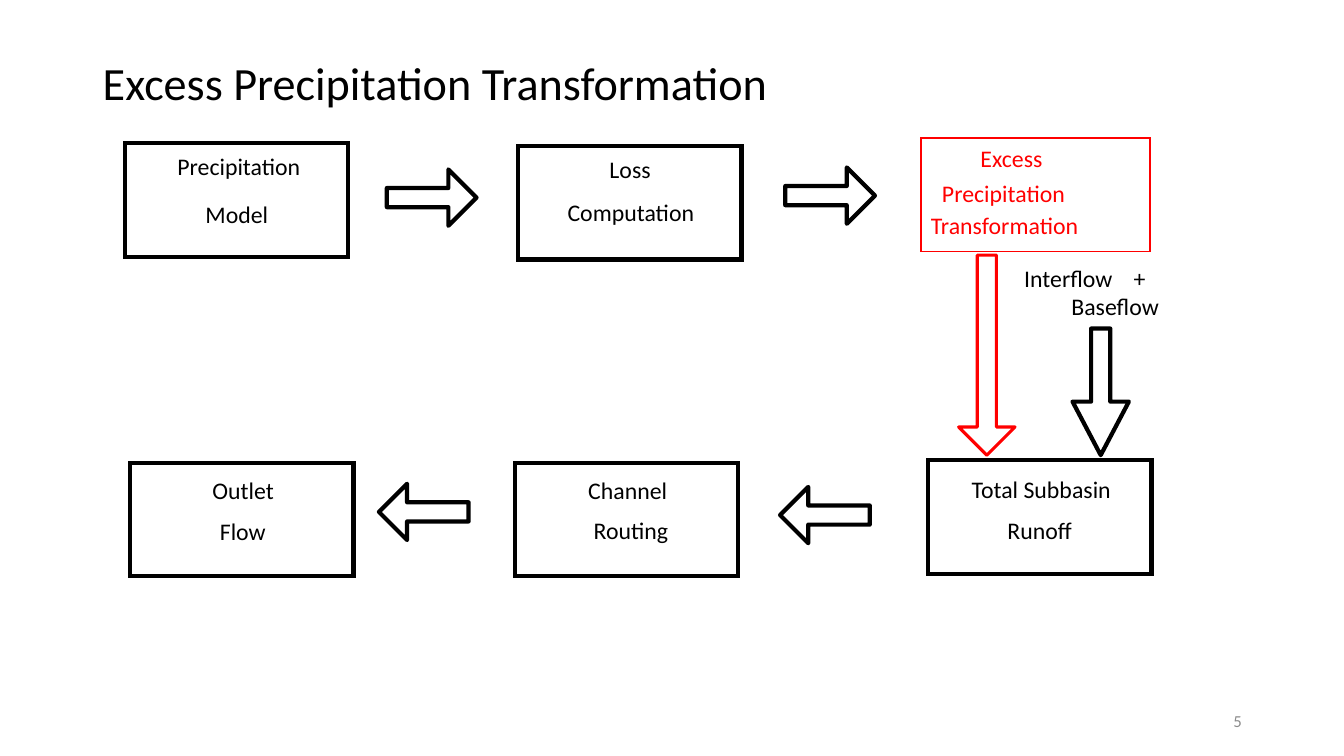
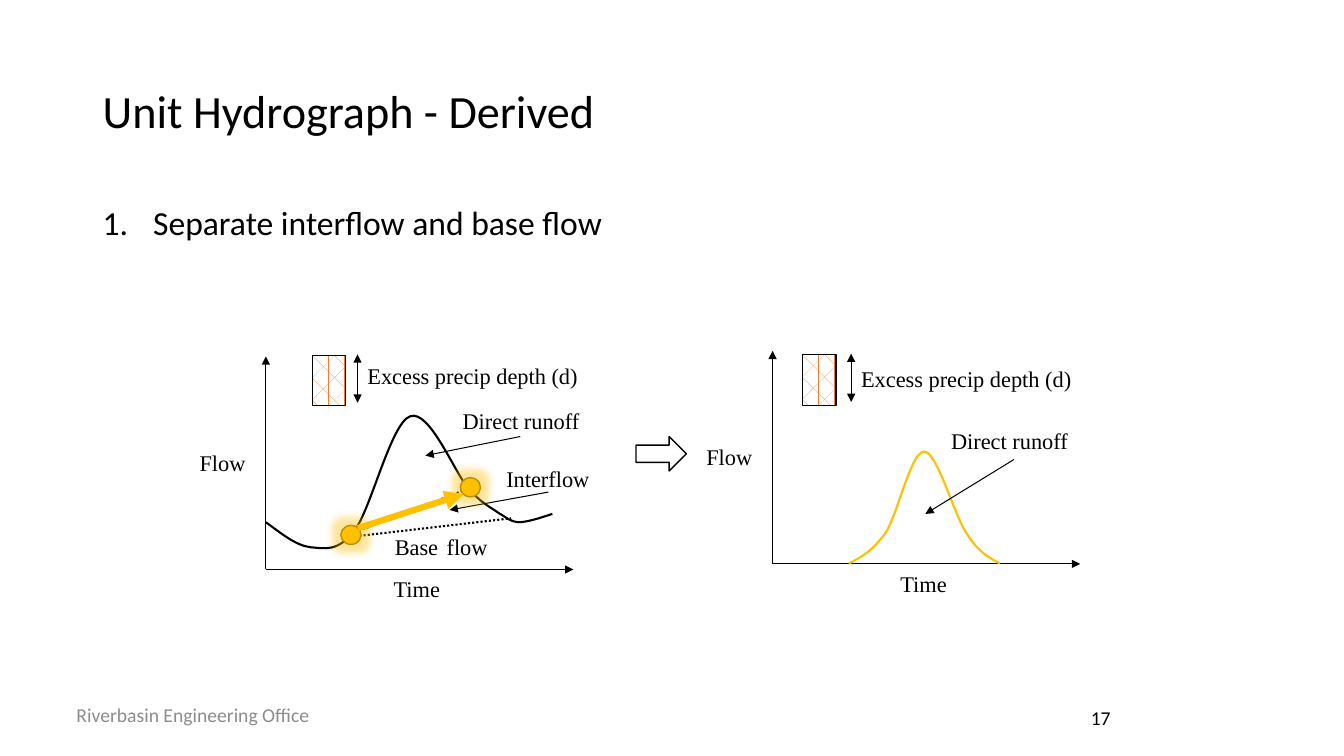
from lxml import etree
from pptx import Presentation
from pptx import util as u
from pptx.dml.color import RGBColor
from pptx.enum import dml, shapes, text
from pptx.oxml.ns import qn

BLACK, WHITE, RED = "000000", "FFFFFF", "FF0000"
GREY, AMBER, DARK_AMBER, ORANGE = "8C8C8C", "FFC000", "BD8E00", "ED7D31"
SANS, SERIF = "Calibri", "Times New Roman"
LEFT, CENTER, RIGHT = text.PP_ALIGN.LEFT, text.PP_ALIGN.CENTER, text.PP_ALIGN.RIGHT
TOP, MIDDLE = text.MSO_ANCHOR.TOP, text.MSO_ANCHOR.MIDDLE
KIND = shapes.MSO_SHAPE
BOX_WIDTH, BOX_HEIGHT = 5.63, 2.86
WORD_WIDTH, WORD_HEIGHT = 5.44, 0.91
ARROW_LENGTH, ARROW_SPAN = 2.26, 1.42
AXIS_WIDTH, AXIS_HEIGHT = 7.75, 5.37


def rgb(color):
    return RGBColor.from_string(color)


def cm(*values):
    return [u.Cm(value) for value in values]


def style_run(run, size, color=BLACK, font=SANS):
    run.font.size = u.Pt(size)
    run.font.name = font
    run.font.color.rgb = rgb(color)


def add_text(slide, place, words, size, color=BLACK, font=SANS, align=LEFT, anchor=TOP):
    frame = slide.shapes.add_textbox(*cm(*place)).text_frame
    frame.word_wrap = True
    frame.vertical_anchor = anchor
    frame.text = words
    paragraph = frame.paragraphs[0]
    paragraph.alignment = align
    style_run(paragraph.runs[0], size, color, font)
    return frame


def add_title(slide, words, height):
    frame = add_text(slide, (2.34, 1.02, 29.21, height), words, 33, anchor=MIDDLE)
    frame.paragraphs[0].line_spacing = 0.9


def add_page_number(slide, number, size, **look):
    add_text(slide, (23.93, 17.66, 7.62, 1.02), number, size, **look)


def add_label(slide, place, words, align=LEFT):
    return add_text(slide, place, words, 16, font=SERIF, align=align)


def add_word(slide, left, top, word, width=WORD_WIDTH, color=BLACK, align=LEFT):
    frame = add_text(slide, (left, top, width, WORD_HEIGHT), word, 17, color=color, align=align)
    frame.margin_left = frame.margin_right = frame.margin_top = frame.margin_bottom = 0


def add_outline(slide, kind, place, color=BLACK, width=3, fill=None):
    shape = slide.shapes.add_shape(kind, *cm(*place))
    shape.shadow.inherit = False
    if fill:
        shape.fill.solid()
        shape.fill.fore_color.rgb = rgb(fill)
    else:
        shape.fill.background()
    shape.line.color.rgb = rgb(color)
    shape.line.width = u.Pt(width)
    return shape


def add_step(slide, left, top, color=BLACK, width=3, box_width=BOX_WIDTH):
    box = add_outline(slide, KIND.RECTANGLE, (left, top, box_width, BOX_HEIGHT), color, width)
    etree.SubElement(box.line._get_or_add_ln(), qn("a:miter"), lim="800000")


def add_block_arrow(slide, kind, place, head=0.5, color=BLACK, width=3):
    arrow = add_outline(slide, kind, place, color, width)
    arrow.adjustments[0] = 0.34
    arrow.adjustments[1] = head


def add_line(slide, ends, color=BLACK, width=0.75, heads=("tailEnd",), dash=None):
    line = slide.shapes.add_connector(shapes.MSO_CONNECTOR.STRAIGHT, *cm(*ends))
    line.line.color.rgb = rgb(color)
    line.line.width = u.Pt(width)
    if dash:
        line.line.dash_style = dash
    outline = line.line._get_or_add_ln()
    for head in heads:
        etree.SubElement(outline, qn(f"a:{head}")).set("type", "triangle")
    etree.SubElement(line._element.spPr, qn("a:effectLst"))


def add_curve(slide, start, curves, color):
    builder = slide.shapes.build_freeform(*cm(*start))
    builder.add_line_segments([cm(*curve[-2:]) for curve in curves], close=False)
    flow = builder.convert_to_shape()
    for segment, curve in zip(list(flow._element.iter(qn("a:lnTo"))), curves):
        bend = etree.Element(qn("a:cubicBezTo"))
        for x, y in zip(cm(*curve[::2]), cm(*curve[1::2])):
            etree.SubElement(bend, qn("a:pt"), x=str(x - flow.left), y=str(y - flow.top))
        segment.getparent().replace(segment, bend)
    flow.shadow.inherit = False
    flow.fill.background()
    flow.line.color.rgb = rgb(color)
    flow.line.width = u.Pt(1.5)


def add_axes(slide, left, base):
    add_line(slide, (left, base, left, base - AXIS_HEIGHT))
    add_line(slide, (left, base, left + AXIS_WIDTH, base))
    add_label(slide, (left + 1.8, base + 0.03, 4.01, 0.94), "Time", CENTER)
    add_label(slide, (left - 1.92, base - 3.16, 1.73, 0.94), "Flow")


def add_rain(slide, bar_left, depth_left, top, label_top):
    bar = add_outline(slide, KIND.RECTANGLE, (bar_left, top, 0.85, 1.27), width=0.75)
    bar.fill.patterned()
    bar.fill.pattern = dml.MSO_PATTERN.DIVOT
    bar.fill.fore_color.rgb = rgb(ORANGE)
    bar.fill.back_color.rgb = rgb(WHITE)
    depth = (depth_left, top - 0.03, depth_left, top + 1.19)
    add_line(slide, depth, heads=("headEnd", "tailEnd"))
    add_label(slide, (depth_left, label_top, 6.25, 0.94), "Excess precip depth (d)")


def add_callout(slide, left, top, words, pointer):
    add_label(slide, (left, top, 4.01, 0.94), words)
    add_line(slide, pointer)


def add_glowing_dot(slide, left, top):
    dot = add_outline(slide, KIND.OVAL, (left, top, 0.51, 0.48), DARK_AMBER, 1, AMBER)
    effects = dot._element.spPr.find(qn("a:effectLst"))
    glow = etree.SubElement(effects, qn("a:glow"), rad=str(u.Pt(11)))
    tint = etree.SubElement(glow, qn("a:srgbClr"), val=AMBER)
    etree.SubElement(tint, qn("a:alpha"), val="40000")


def build_transformation(slide):
    add_title(slide, "Excess Precipitation Transformation", 2.28)
    for left, top in ((3.15, 3.61), (13.06, 3.68), (23.39, 11.6), (12.98, 11.66), (3.28, 11.66)):
        add_step(slide, left, top)
    add_step(slide, 23.21, 3.48, RED, 1, 5.77)
    for middle, top, word in (
        (6.02, 3.83, "Precipitation"), (5.97, 5.04, "Model"),
        (15.88, 3.9, "Loss"), (15.9, 4.97, "Computation"),
        (26.24, 11.96, "Total Subbasin"), (26.2, 13, "Runoff"),
        (15.82, 11.99, "Channel"), (15.9, 13, "Routing"),
        (6.13, 11.99, "Outlet"), (6.12, 13.02, "Flow"),
    ):
        add_word(slide, middle - WORD_WIDTH / 2, top, word, align=CENTER)
    for left, top, word in (
        (24.71, 3.61, "Excess"), (23.74, 4.5, "Precipitation"), (23.46, 5.31, "Transformation"),
    ):
        add_word(slide, left, top, word, color=RED)
    for left, top, word, width in (
        (25.81, 6.64, "Interflow", 2.5), (28.57, 6.64, "+", 0.6), (27, 7.36, "Baseflow", 2.5),
    ):
        add_word(slide, left, top, word, width)

    for kind, left, top in (
        (KIND.RIGHT_ARROW, 9.75, 4.27),
        (KIND.RIGHT_ARROW, 19.79, 4.22),
        (KIND.LEFT_ARROW, 9.55, 12.19),
        (KIND.LEFT_ARROW, 19.66, 12.27),
    ):
        add_block_arrow(slide, kind, (left, top, ARROW_LENGTH, ARROW_SPAN))
    add_block_arrow(slide, KIND.DOWN_ARROW, (24.16, 6.43, ARROW_SPAN, 5.04), 0.5, RED, 2.25)
    add_block_arrow(slide, KIND.DOWN_ARROW, (27.03, 8.28, ARROW_SPAN, 3.19), 0.95)
    add_page_number(slide, "5", 12, color=GREY, align=RIGHT, anchor=MIDDLE)


def build_total_hydrograph(slide):
    add_axes(slide, 6.7, 14.35)
    add_rain(slide, 7.87, 9.01, 8.96, 8.99)
    for ends in ((8.74, 13.49, 11.91, 12.27), (8.74, 13.54, 12.88, 13.06)):
        add_line(slide, ends, width=1.5, heads=(), dash=dml.MSO_LINE.ROUND_DOT)
    add_callout(slide, 11.41, 10.13, "Direct runoff", (13.11, 11, 10.72, 11.48))
    add_callout(slide, 12.51, 11.6, "Interflow", (13.82, 12.4, 11.33, 12.85))
    base_flow = add_label(slide, (9.7, 13.03, 3.18, 1.27), "Base").paragraphs[0]
    for piece, size in ((" ", 24), ("flow", 16)):
        run = base_flow.add_run()
        run.text = piece
        style_run(run, size, font=SERIF)
    add_curve(slide, (6.7, 13.16), (
        (7.09, 13.44, 7.44, 13.74, 7.82, 13.79),
        (8.2, 13.82, 8.51, 13.92, 8.94, 13.36),
        (9.35, 12.83, 9.86, 10.64, 10.34, 10.49),
        (10.82, 10.31, 11.46, 11.91, 11.81, 12.32),
        (12.19, 12.73, 12.37, 12.78, 12.57, 12.93),
        (12.8, 13.06, 12.83, 13.13, 13.06, 13.16),
        (13.28, 13.16, 13.59, 13.06, 13.92, 12.95),
    ), BLACK)
    add_glowing_dot(slide, 8.59, 13.24)
    add_glowing_dot(slide, 11.6, 12.04)
    add_line(slide, (9.02, 13.31, 11.68, 12.45), AMBER, 4.5)


def build_direct_hydrograph(slide):
    add_axes(slide, 19.47, 14.21)
    add_rain(slide, 20.22, 21.45, 8.94, 9.07)
    add_curve(slide, (21.39, 14.2), (
        (21.69, 14.05, 21.99, 13.89, 22.33, 13.41),
        (22.63, 12.93, 22.96, 11.38, 23.29, 11.38),
        (23.62, 11.38, 24.03, 12.95, 24.36, 13.44),
        (24.66, 13.92, 24.92, 14.05, 25.2, 14.2),
    ), AMBER)
    add_callout(slide, 23.72, 10.64, "Direct runoff", (25.55, 11.58, 23.32, 12.95))


def build_unit_hydrograph(slide):
    add_title(slide, "Unit Hydrograph - Derived", 3.68)
    body = add_text(slide, (2.34, 5.08, 29.21, 12.09), "Separate interflow and base flow", 24)
    separation = body.paragraphs[0]
    properties = separation._p.get_or_add_pPr()
    properties.set("marL", str(u.Cm(1.27)))
    properties.set("indent", str(u.Cm(-1.27)))
    etree.SubElement(properties, qn("a:buAutoNum")).set("type", "arabicPeriod")
    separation.line_spacing = 0.9
    build_total_hydrograph(slide)
    add_outline(slide, KIND.RIGHT_ARROW, (16.03, 11, 1.27, 0.87), width=1, fill=WHITE)
    build_direct_hydrograph(slide)
    add_text(
        slide, (0, 17.5, 9.73, 1.02), "Riverbasin Engineering Office", 14,
        color=GREY, align=CENTER, anchor=MIDDLE,
    )
    add_page_number(slide, "17", 14, align=CENTER)


def main():
    deck = Presentation()
    deck.slide_width, deck.slide_height = cm(33.87, 19.05)
    for build in (build_transformation, build_unit_hydrograph):
        build(deck.slides.add_slide(deck.slide_layouts[6]))
    deck.save("out.pptx")


if __name__ == "__main__":
    main()
